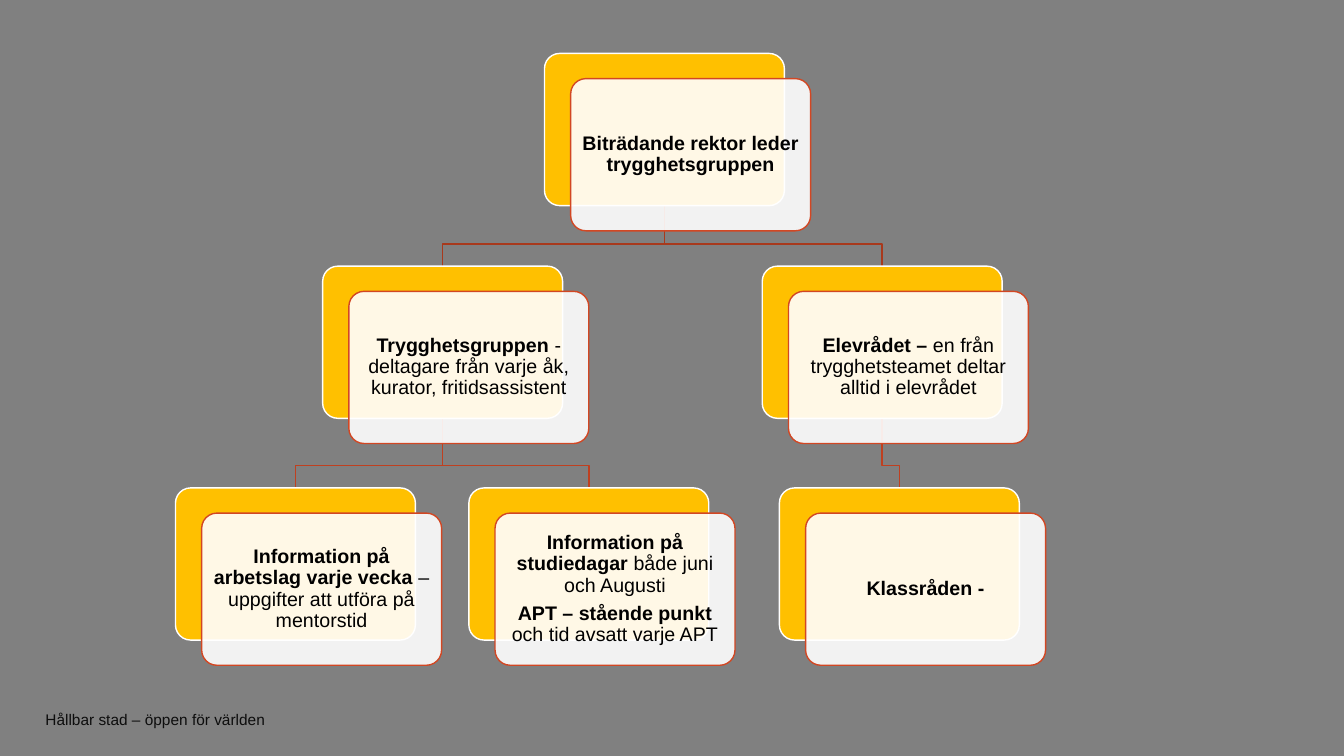
from lxml.etree import SubElement
from pptx import Presentation
from pptx.dml.color import RGBColor
from pptx.enum.shapes import MSO_SHAPE
from pptx.enum.text import MSO_ANCHOR, PP_ALIGN
from pptx.oxml.ns import qn
from pptx.util import Inches, Pt

CARD_WIDTH, CARD_HEIGHT = 2.38, 1.51
OFFSET_X, OFFSET_Y = 0.26, 0.25
BEND_ABOVE_CHILD = 0.22
LEVELS = [0.53, 2.64, 4.84]
LINK_COLORS = ["A8391C", "BF4020"]

CARDS = {
    "leader": (5.4, 0, [[("Biträdande rektor leder trygghetsgruppen", True)]]),
    "safety_group": (3.2, 1, [[
        ("Trygghetsgruppen ", True),
        ("- deltagare från varje åk, kurator, fritidsassistent", False),
    ]]),
    "student_council": (7.56, 1, [[
        ("Elevrådet –", True),
        (" en från trygghetsteamet deltar alltid i elevrådet", False),
    ]]),
    "work_team": (1.74, 2, [[
        ("Information på arbetslag varje vecka ", True),
        ("– uppgifter att utföra på mentorstid", False),
    ]]),
    "study_days": (4.65, 2, [
        [("Information på studiedagar ", True), ("både juni och Augusti", False)],
        [("APT – stående punkt", True), (" och tid avsatt varje APT", False)],
    ]),
    "class_councils": (7.73, 2, [[("Klassråden -", True)]]),
}
LINKS = [
    ("student_council", "class_councils"),
    ("leader", "student_council"),
    ("safety_group", "study_days"),
    ("safety_group", "work_team"),
    ("leader", "safety_group"),
]


def color(value):
    return RGBColor.from_string(value)


def apply_format(target, values):
    for name, value in values.items():
        setattr(target, name, value)


def format_line(shape, value):
    shape.line.color.rgb = color(value)
    shape.line.width = Pt(1)
    shape.shadow.inherit = False


def set_opacity(shape, percent):
    color_element = shape.fill._xPr.find(qn("a:solidFill"))[0]
    SubElement(color_element, qn("a:alpha"), val=str(percent * 1000))


def add_run(paragraph, text, size, value, bold=False):
    run = paragraph.add_run()
    run.text = text
    apply_format(run.font, {"name": "Arial", "size": Pt(size), "bold": bold})
    run.font.color.rgb = color(value)


def format_frame(frame, margin):
    sides = ["margin_left", "margin_top", "margin_right", "margin_bottom"]
    apply_format(frame, dict.fromkeys(sides, Inches(margin)))
    apply_format(frame, {"word_wrap": True, "vertical_anchor": MSO_ANCHOR.MIDDLE})


def add_link(slide, parent, child):
    parent_left, parent_level, _ = CARDS[parent]
    child_left, child_level, _ = CARDS[child]
    start_x = Inches(parent_left + CARD_WIDTH / 2)
    end_x = Inches(child_left + CARD_WIDTH / 2)
    start_y = Inches(LEVELS[parent_level] + CARD_HEIGHT)
    bend_y = Inches(LEVELS[child_level] - BEND_ABOVE_CHILD)
    end_y = Inches(LEVELS[child_level])
    builder = slide.shapes.build_freeform(start_x, start_y)
    builder.add_line_segments(
        [(start_x, bend_y), (end_x, bend_y), (end_x, end_y)], close=False
    )
    link = builder.convert_to_shape()
    link.fill.background()
    format_line(link, LINK_COLORS[parent_level])


def add_panel(slide, left, top, fill, line):
    panel = slide.shapes.add_shape(
        MSO_SHAPE.ROUNDED_RECTANGLE,
        Inches(left), Inches(top), Inches(CARD_WIDTH), Inches(CARD_HEIGHT),
    )
    panel.adjustments[0] = 0.1
    panel.fill.solid()
    panel.fill.fore_color.rgb = color(fill)
    format_line(panel, line)
    return panel


def add_card(slide, left, level, paragraphs):
    top = LEVELS[level]
    add_panel(slide, left, top, "FFC000", "FFFFFF")
    front = add_panel(slide, left + OFFSET_X, top + OFFSET_Y, "FFFFFF", "D24723")
    set_opacity(front, 90)
    frame = front.text_frame
    format_frame(frame, 0.06)
    for index, runs in enumerate(paragraphs):
        paragraph = frame.add_paragraph() if index else frame.paragraphs[0]
        apply_format(paragraph, {
            "alignment": PP_ALIGN.CENTER,
            "line_spacing": 0.9,
            "space_after": Pt(5),
        })
        for text, bold in runs:
            add_run(paragraph, text, 14, "000000", bold)


def add_footer(slide, text):
    box = slide.shapes.add_textbox(
        Inches(0.45), Inches(7.06), Inches(9.45), Inches(0.16)
    )
    format_frame(box.text_frame, 0)
    add_run(box.text_frame.paragraphs[0], text, 11, "0D0D0D")


def main():
    presentation = Presentation()
    presentation.slide_width = Inches(13.33)
    presentation.slide_height = Inches(7.5)
    slide = presentation.slides.add_slide(presentation.slide_layouts[6])
    slide.background.fill.solid()
    slide.background.fill.fore_color.rgb = color("808080")
    add_footer(slide, "Hållbar stad – öppen för världen")
    for parent, child in LINKS:
        add_link(slide, parent, child)
    for left, level, paragraphs in CARDS.values():
        add_card(slide, left, level, paragraphs)
    presentation.save("out.pptx")


if __name__ == "__main__":
    main()
